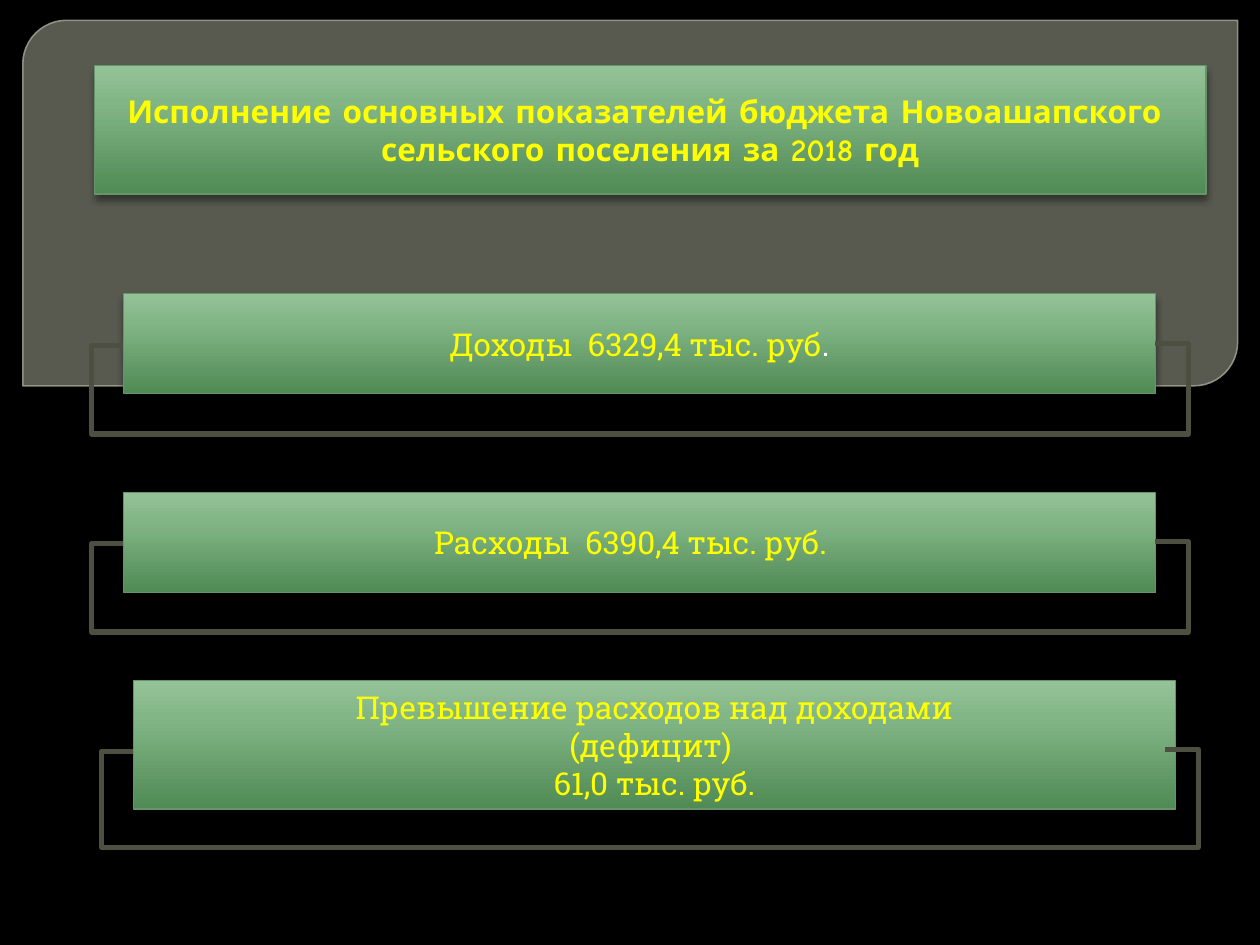
from copy import deepcopy
from dataclasses import dataclass

from lxml import etree
from pptx import Presentation
from pptx import util as u
from pptx.dml import color
from pptx.enum import shapes, text
from pptx.oxml import ns

YELLOW, WHITE = "FFFF00", "FFFFFF"
GREEN_STOPS = [(0, "508A55"), (0.72, "83B687"), (1, "94C298")]
GREEN_EDGE = "67946B"
BRACKET_COLOR = "4D5040"


@dataclass
class Bar:
    """A green bar with the bracket below it; lengths in centimetres."""
    left: float
    top: float
    width: float
    height: float
    paragraphs: list[list[tuple[str, str]]]
    bracket_top: float
    bracket_drop: float
    right_inset: float = 0.25


BARS = [
    Bar(2.49, 5.92, 20.8, 2.01,
        [[("Доходы  6329,4 тыс. руб", YELLOW), (".", WHITE)]], 6.93, 1.78),
    Bar(2.49, 9.93, 20.8, 2.01,
        [[("Расходы  6390,4 тыс. руб.", YELLOW)]], 10.92, 1.78, right_inset=0.6),
    Bar(2.69, 13.72, 21.01, 2.59,
        [[("Превышение расходов над доходами", YELLOW)],
         [("(дефицит) ", YELLOW)],
         [("61,0 тыс. руб.", YELLOW)]], 15.11, 1.93),
]
TITLE = [[("Исполнение основных показателей бюджета Новоашапского ", YELLOW)],
         [("сельского поселения за 2018 год", YELLOW)]]


def rgb(value: str) -> color.RGBColor:
    return color.RGBColor.from_string(value)


def child(parent, tag: str, **attributes):
    return etree.SubElement(parent, ns.qn(tag), {k: str(v) for k, v in attributes.items()})


def set_alpha(color_parent, percent: int) -> None:
    child(color_parent.find(".//" + ns.qn("a:srgbClr")), "a:alpha", val=percent * 1000)


def style_green(box) -> None:
    """Give the box the green gradient, its edge and a soft shadow below."""
    box.fill.gradient()
    box.fill.gradient_angle = 90
    stop_list = box._element.spPr.find(".//" + ns.qn("a:gsLst"))
    stop_list.append(deepcopy(stop_list[-1]))
    for stop, (position, value) in zip(box.fill.gradient_stops, GREEN_STOPS):
        stop.position = position
        stop.color.rgb = rgb(value)
    box.line.color.rgb = rgb(GREEN_EDGE)
    box.line.width = u.Pt(0.75)
    box.shadow.inherit = False
    effects = box._element.spPr.find(ns.qn("a:effectLst"))
    shadow = child(effects, "a:outerShdw", blurRad=u.Pt(4), dist=u.Pt(3),
                   dir=90 * 60000, rotWithShape=0)
    child(shadow, "a:srgbClr", val="000000")
    set_alpha(effects, 43)


def write_text(box, paragraphs, *, font: str, size: float = 18, bold: bool = False,
               right_inset: float = 0.25) -> None:
    frame = box.text_frame
    frame.word_wrap = True
    frame.auto_size = text.MSO_AUTO_SIZE.NONE
    frame.vertical_anchor = text.MSO_ANCHOR.MIDDLE
    frame.margin_right = u.Cm(right_inset)
    for index, spans in enumerate(paragraphs):
        para = frame.add_paragraph() if index else frame.paragraphs[0]
        para.alignment = text.PP_ALIGN.CENTER
        for wording, value in spans:
            span = para.add_run()
            span.text = wording
            span.font.name = font
            span.font.size = u.Pt(size)
            span.font.bold = bold
            span.font.color.rgb = rgb(value)


def add_panel(page) -> None:
    """Add the translucent rounded panel behind everything else."""
    panel = page.shapes.add_shape(shapes.MSO_SHAPE.ROUND_2_DIAG_RECTANGLE,
                                  u.Cm(0.46), u.Cm(0.41), u.Cm(24.49), u.Cm(7.37))
    panel.adjustments[0] = 0.12
    panel.adjustments[1] = 0
    panel.shadow.inherit = False
    panel.fill.solid()
    panel.fill.fore_color.rgb = rgb("888B7B")
    set_alpha(panel._element.spPr.find(ns.qn("a:solidFill")), 65)
    panel.line.color.rgb = rgb("9DA090")
    panel.line.width = u.Pt(0.87)
    set_alpha(panel._element.spPr.find(ns.qn("a:ln")), 88)
    page.shapes._spTree.insert(2, panel._element)


def add_title(page) -> None:
    title = page.shapes.title
    title.left, title.top = u.Cm(1.91), u.Cm(1.32)
    title.width, title.height = u.Cm(22.4), u.Cm(2.59)
    style_green(title)
    write_text(title, TITLE, font="Comic Neue", bold=True)


def add_bar(page, bar: Bar) -> None:
    box = page.shapes.add_shape(shapes.MSO_SHAPE.RECTANGLE, u.Cm(bar.left), u.Cm(bar.top),
                                u.Cm(bar.width), u.Cm(bar.height))
    style_green(box)
    write_text(box, bar.paragraphs, font="Roboto Slab", right_inset=bar.right_inset)


def add_bracket(page, bar: Bar, width: float = 20.8, rise: float = 0.04) -> None:
    """Run a five-part elbow from the bar's left side, under it, to its right side."""
    bracket = page.shapes.add_connector(
        shapes.MSO_CONNECTOR.ELBOW, u.Cm(bar.left), u.Cm(bar.bracket_top),
        u.Cm(bar.left + width), u.Cm(bar.bracket_top + rise))
    bracket.line.color.rgb = rgb(BRACKET_COLOR)
    bracket.line.width = u.Pt(3)
    properties = bracket._element.spPr
    child(properties, "a:effectLst")
    frame = properties.find(ns.qn("a:xfrm"))
    frame.set("rot", str(180 * 60000))
    frame.set("flipH", "1")
    geometry = properties.find(ns.qn("a:prstGeom"))
    geometry.set("prst", "bentConnector5")
    for old in list(geometry):
        geometry.remove(old)
    guides = child(geometry, "a:avLst")
    ratios = (-0.64 / width, -bar.bracket_drop / rise, 1 + 0.67 / width)
    for number, ratio in enumerate(ratios, 1):
        child(guides, "a:gd", name=f"adj{number}", fmla=f"val {round(ratio * 100000)}")


def main() -> None:
    deck = Presentation()
    deck.slide_width, deck.slide_height = u.Cm(25.4), u.Cm(19.05)
    page = deck.slides.add_slide(deck.slide_layouts[5])
    page.background.fill.solid()
    page.background.fill.fore_color.rgb = rgb("000000")
    add_panel(page)
    add_title(page)
    for bar in BARS:
        add_bar(page, bar)
    for bar in BARS:
        add_bracket(page, bar)
    deck.save("out.pptx")


if __name__ == "__main__":
    main()
